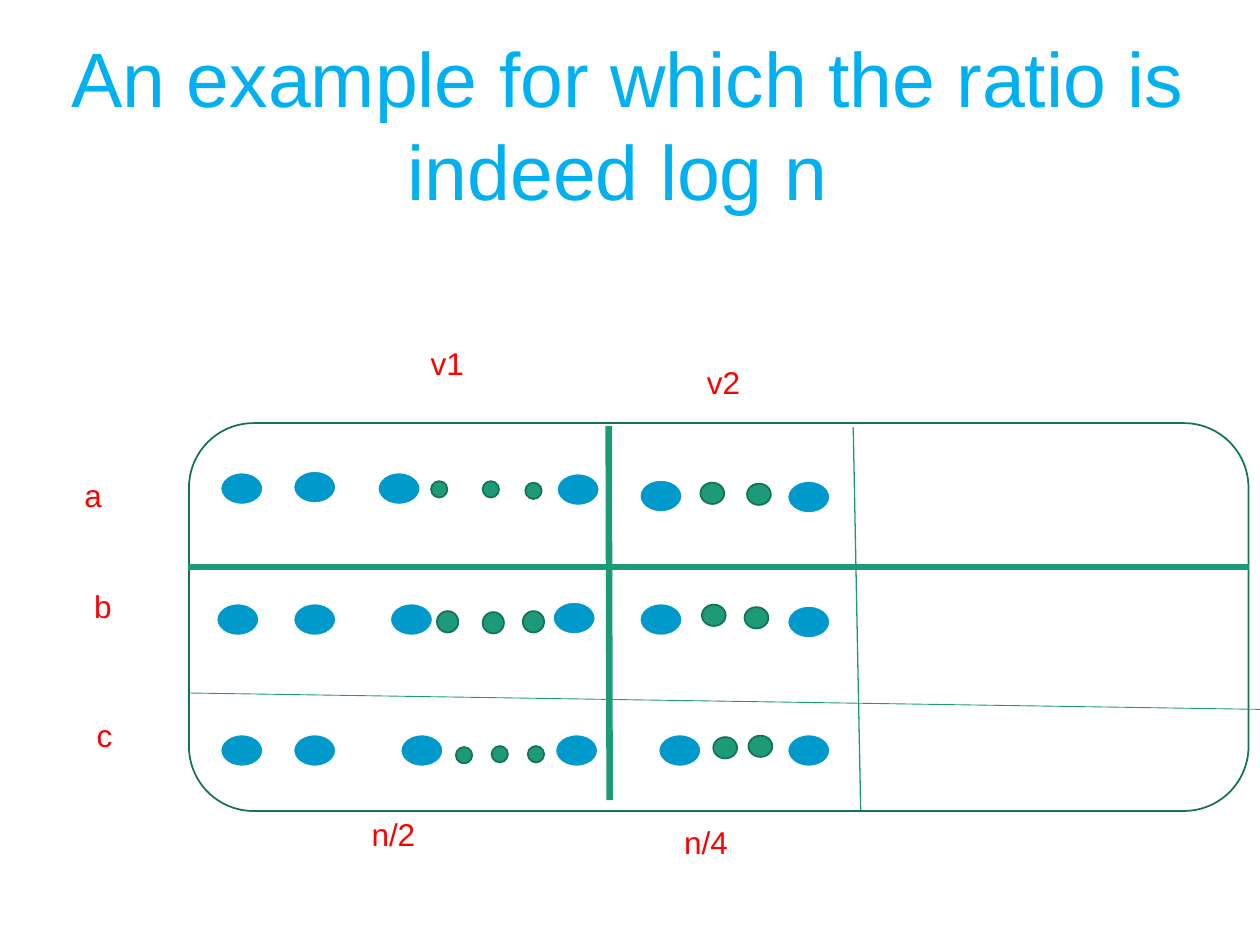
"""Build the slide with the set cover example for the log n ratio."""
from lxml.etree import SubElement
from pptx import Presentation
from pptx.dml.color import RGBColor
from pptx.enum.shapes import MSO_CONNECTOR, MSO_SHAPE
from pptx.enum.text import MSO_ANCHOR, MSO_AUTO_SIZE, PP_ALIGN
from pptx.oxml.ns import qn
from pptx.util import Cm, Pt


def paint(color, value):
    color.rgb = RGBColor.from_string(value)


def draw(kind, box, fill, edge, width):
    shape = slide.shapes.add_shape(kind, *map(Cm, box))
    shape.shadow.inherit = False
    if fill:
        shape.fill.solid()
        paint(shape.fill.fore_color, fill)
    else:
        shape.fill.background()
    paint(shape.line.color, edge)
    shape.line.width = Pt(width)


BLUE, GREEN, DARK, WHITE = "0099CC", "1D9A78", "157259", "FFFFFF"

deck = Presentation()
deck.slide_width, deck.slide_height = Cm(25.4), Cm(19.05)
slide = deck.slides.add_slide(deck.slide_layouts[5])

title = slide.shapes.title
title.left, title.top, title.width, title.height = map(Cm, (0.84, 0.64, 23.65, 3.68))
frame = title.text_frame
frame.text = "An example for which the ratio is indeed log n "
frame.auto_size = MSO_AUTO_SIZE.NONE
frame.vertical_anchor = MSO_ANCHOR.MIDDLE
head = frame.paragraphs[0]
head.alignment = PP_ALIGN.CENTER
head.font.name, head.font.size = "Arial", Pt(44)
paint(head.font.color, "00B0F0")

draw(MSO_SHAPE.ROUNDED_RECTANGLE, (3.81, 8.53, 21.36, 7.82), None, DARK, 1)

lines = [
    (12.27, 8.59, 12.29, 16.13, 3.75),
    (3.78, 11.43, 25.17, 11.43, 3.5),
    (3.81, 13.97, 25.4, 14.3, 0.5),
    (17.2, 8.61, 17.35, 16.33, 0.75),
]
for *ends, width in lines:
    line = slide.shapes.add_connector(MSO_CONNECTOR.STRAIGHT, *map(Cm, ends))
    paint(line.line.color, GREEN)
    line.line.width = Pt(width)
    SubElement(line._element.spPr, qn("a:effectLst"))

groups = [
    (0.85, 0.64, BLUE, WHITE, 0.75, [
        (4.45, 9.53), (5.92, 9.5), (7.62, 9.53), (11.23, 9.55), (12.9, 9.68), (15.88, 9.7),
        (4.37, 12.17), (5.92, 12.17), (7.87, 12.17), (11.15, 12.14), (12.9, 12.17), (15.88, 12.22),
        (4.45, 14.81), (5.92, 14.81), (8.08, 14.81), (11.2, 14.81), (13.28, 14.81), (15.88, 14.81),
    ]),
    (0.33, 0.33, GREEN, DARK, 1, [
        (8.69, 9.7), (9.73, 9.7), (10.59, 9.73),
        (9.19, 15.06), (9.91, 15.04), (10.64, 15.04),
    ]),
    (0.43, 0.43, GREEN, DARK, 1, [(8.81, 12.32), (9.73, 12.34), (10.54, 12.32)]),
    (0.48, 0.43, GREEN, DARK, 1, [
        (14.12, 9.73), (15.06, 9.75), (14.15, 12.19),
        (15.01, 12.24), (14.38, 14.86), (15.09, 14.83),
    ]),
]
for wide, high, fill, edge, width, spots in groups:
    for left, top in spots:
        draw(MSO_SHAPE.OVAL, (left, top, wide, high), fill, edge, width)

labels = [
    ("a", 1.45, 9.47, 1.27),
    ("b", 1.65, 11.71, 1.27),
    ("c", 1.7, 14.3, 1.27),
    ("v1", 8.43, 6.81, 4.24),
    ("v2", 14, 7.19, 4.24),
    ("n/2", 7.24, 16.31, 8.74),
    ("n/4", 13.54, 16.46, 8.74),
]
for text, left, top, wide in labels:
    frame = slide.shapes.add_textbox(Cm(left), Cm(top), Cm(wide), Cm(1.02)).text_frame
    frame.word_wrap = True
    frame.auto_size = MSO_AUTO_SIZE.SHAPE_TO_FIT_TEXT
    frame.text = text
    font = frame.paragraphs[0].font
    font.name, font.size = "Arial", Pt(18)
    paint(font.color, "FF0000")

deck.save("out.pptx")
